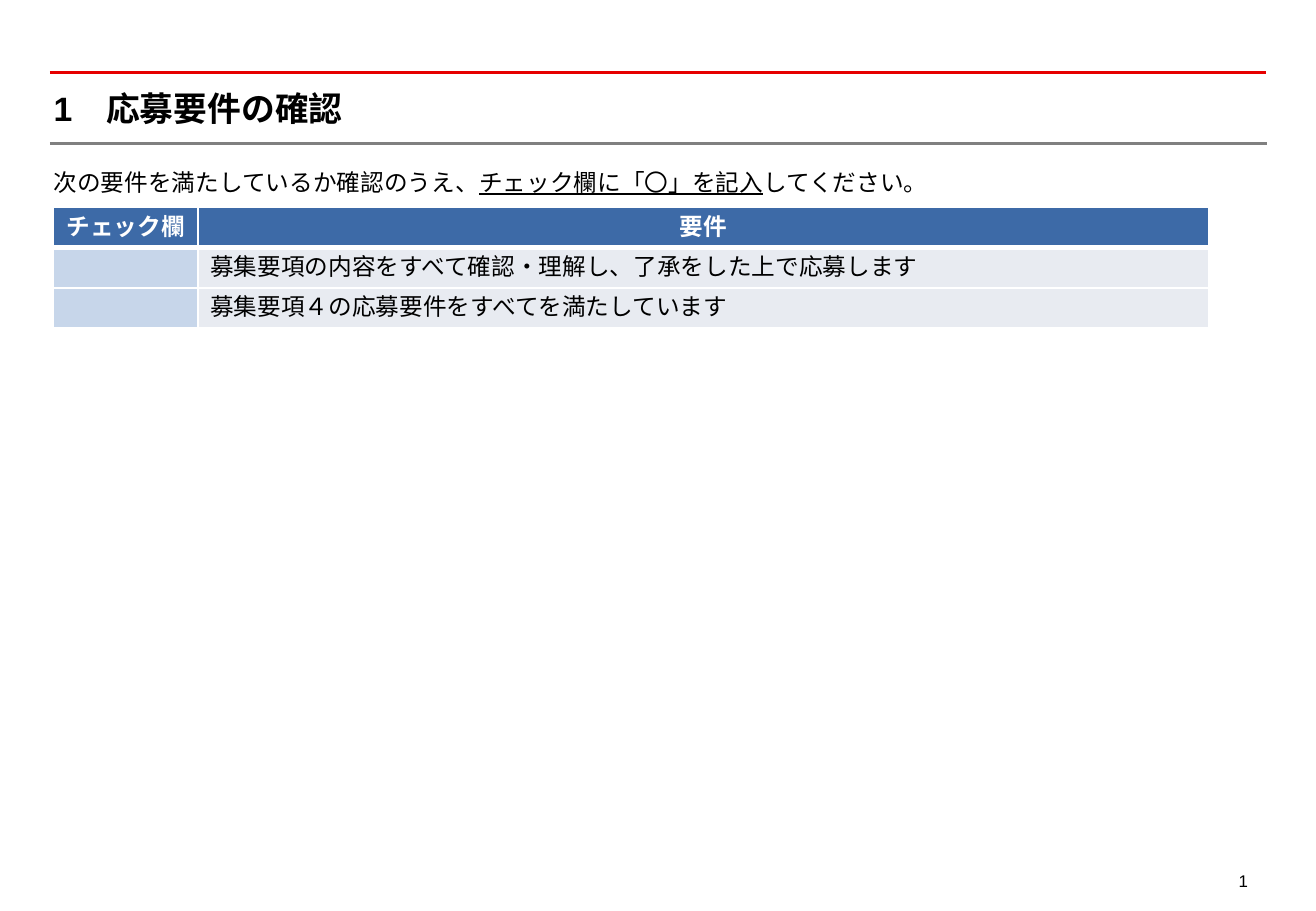
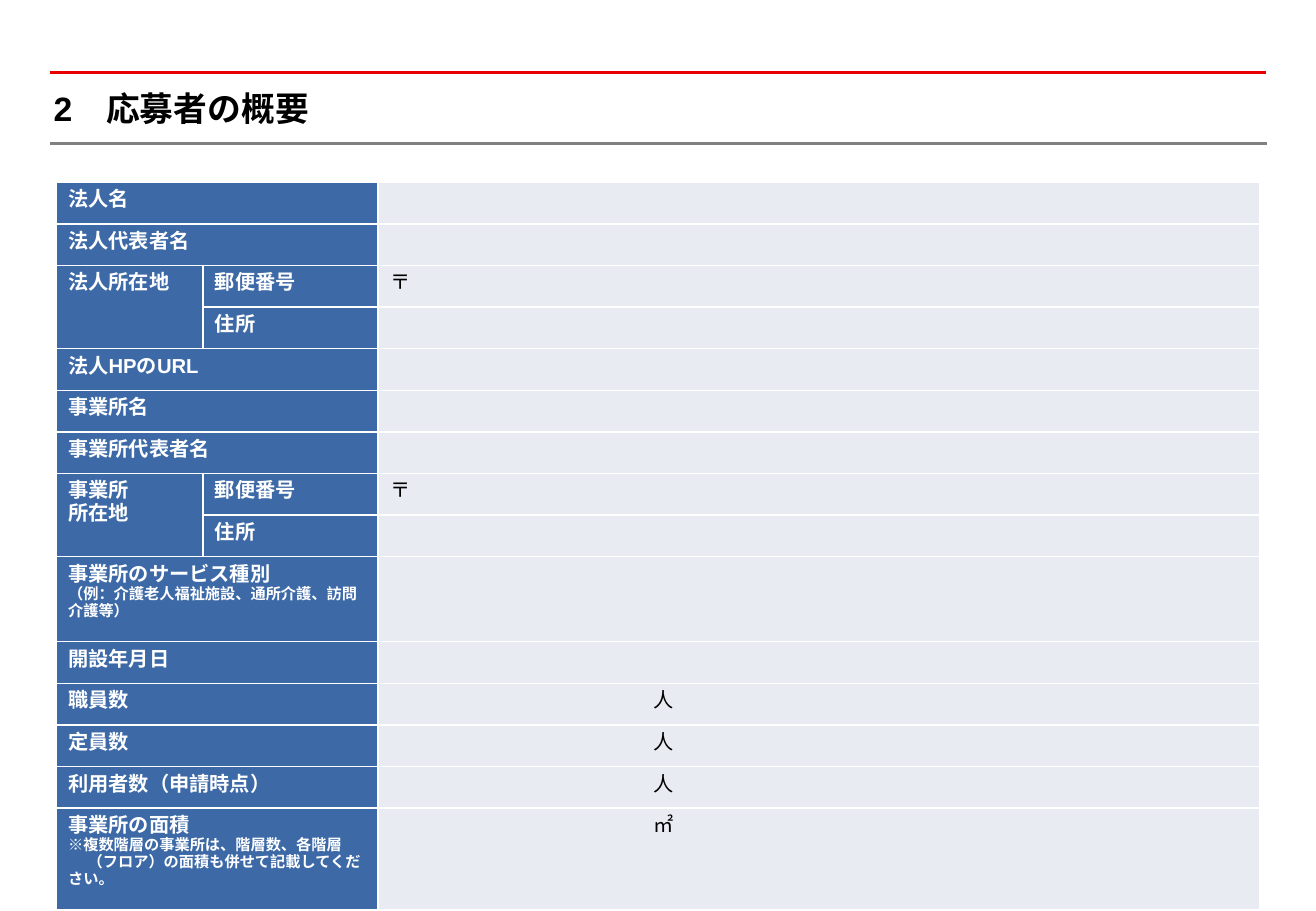
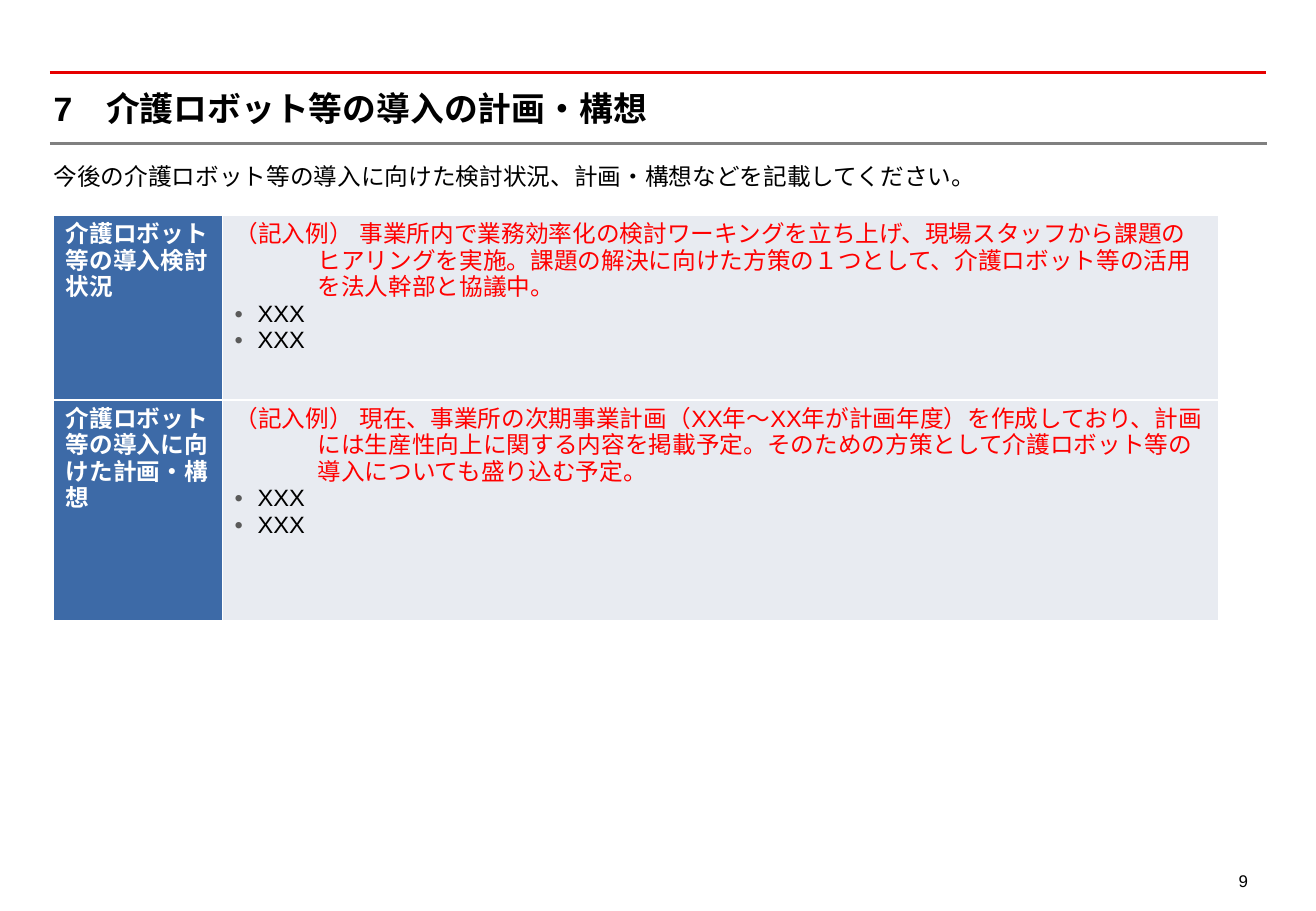
"""Build three pages of an application form for care robot support."""
from lxml.etree import SubElement
from pptx import Presentation
from pptx.enum.shapes import MSO_CONNECTOR
from pptx.enum.text import MSO_ANCHOR, PP_ALIGN
from pptx.dml.color import RGBColor
from pptx.oxml.ns import qn
from pptx.util import Cm, Pt

FONT = "Arial"
BLACK, WHITE, RED = "000000", "FFFFFF", "FF0000"
BLUE, SKY, PALE = "3D6AA7", "C7D6EA", "E8EBF1"
LEFT, MID, RIGHT = PP_ALIGN.LEFT, PP_ALIGN.CENTER, PP_ALIGN.RIGHT

STYLES = {
    "title": (20, BLACK, True, LEFT, 0, 0),
    "page": (10, BLACK, False, RIGHT, 0, 0),
    "note": (14, BLACK, False, LEFT, 0, 0),
    "top": (14, WHITE, True, MID, 0, 0),
    "side": (14, WHITE, True, LEFT, 0, 0),
    "tip": (14, RED, False, LEFT, 1.73, -1.73),
    "bullet": (14, BLACK, False, LEFT, 0.48, -0.48),
    "label": (12, WHITE, True, LEFT, 0, 0),
    "small": (9, WHITE, True, LEFT, 0, 0),
    "inset": (9, WHITE, True, LEFT, 0, 0.41),
    "value": (12, BLACK, False, LEFT, 0, 0),
    "unit": (12, BLACK, False, LEFT, 5.5, 0),
}


def paint(fill, code):
    fill.solid()
    fill.fore_color.rgb = RGBColor.from_string(code)


def write(frame, lines):
    """Write lines of (style, run, run, ...), where every second run is underlined."""
    frame.word_wrap = True
    for i, (style, *runs) in enumerate(lines):
        size, code, bold, align, left, first = STYLES[style]
        para = frame.add_paragraph() if i else frame.paragraphs[0]
        para.alignment = align
        props = para._p.get_or_add_pPr()
        props.set("marL", str(Cm(left)))
        props.set("indent", str(Cm(first)))
        if style == "bullet":
            color = SubElement(props, qn("a:buClr"))
            SubElement(color, qn("a:srgbClr"), val="5A5A5A")
            SubElement(props, qn("a:buFont"), typeface=FONT)
            SubElement(props, qn("a:buChar"), char="•")
        for j, text in enumerate(runs):
            run = para.add_run()
            run.text = text
            run.font.size = Pt(size)
            run.font.bold = bold
            run.font.underline = j % 2 == 1
            run.font.name = FONT
            paint(run.font.fill, code)
            SubElement(run.font._element, qn("a:ea"), typeface=FONT)


form = [
    (["法人名"], "", ""),
    (["法人代表者名"], "", ""),
    (["法人所在地"], "郵便番号", "〒"),
    ([], "住所", ""),
    (["法人HPのURL"], "", ""),
    (["事業所名"], "", ""),
    (["事業所代表者名"], "", ""),
    (["事業所", "所在地"], "郵便番号", "〒"),
    ([], "住所", ""),
    (["事業所のサービス種別"], "", ""),
    (["開設年月日"], "", ""),
    (["職員数"], "", "人"),
    (["定員数"], "", "人"),
    (["利用者数（申請時点）"], "", "人"),
    (["事業所の面積"], "", "㎡"),
]
cells = []
for names, part, value in form:
    kind = "value" if value == "〒" else "unit"
    cells.append([
        [("label", name) for name in names],
        [("label", part)] if part else [],
        [(kind, value)] if value else [],
    ])
cells[9][0].append(("small", "（例：介護老人福祉施設、通所介護、訪問介護等）"))
cells[14][0] += [
    ("small", "※複数階層の事業所は、階層数、各階層"),
    ("inset", "（フロア）の面積も併せて記載してください。"),
]
spans = [(r, 0, r, 1) for r, row in enumerate(form) if not row[1]]
spans += [(2, 0, 3, 0), (7, 0, 8, 0)]
dots = [("bullet", "XXX")] * 2

pages = [
    {
        "title": "1　応募要件の確認", "page": "1", "top": 3.51,
        "note": ("次の要件を満たしているか確認のうえ、", "チェック欄に「〇」を記入", "してください。"),
        "at": (1.12, 4.34), "cols": (3.02, 21.13), "rows": [0.84] * 3,
        "tints": (SKY, PALE), "head": True, "size": 14, "foot": 0, "spans": [],
        "cells": [
            [[("top", "チェック欄")], [("top", "要件")]],
            [[], [("note", "募集要項の内容をすべて確認・理解し、了承をした上で応募します")]],
            [[], [("note", "募集要項４の応募要件をすべてを満たしています")]],
        ],
    },
    {
        "title": "2　応募者の概要", "page": "", "top": 0, "note": (),
        "at": (1.17, 3.81), "cols": (3.07, 3.66, 18.44),
        "rows": [0.87] * 9 + [1.78] + [0.87] * 4 + [2.13],
        "tints": (BLUE, BLUE, PALE), "head": False, "size": 12, "foot": 0.13,
        "spans": spans, "cells": cells,
    },
    {
        "title": "7　介護ロボット等の導入の計画・構想", "page": "9", "top": 3.38,
        "note": ("今後の介護ロボット等の導入に向けた検討状況、計画・構想などを記載してください。",),
        "at": (1.12, 4.5), "cols": (3.53, 20.83), "rows": [3.86, 4.62],
        "tints": (BLUE, PALE), "head": False, "size": 14, "foot": 0.13, "spans": [],
        "cells": [
            [[("side", "介護ロボット等の導入検討状況")],
             [("tip", "（記入例） 事業所内で業務効率化の検討ワーキングを立ち上げ、現場スタッフから課題の"
               "ヒアリングを実施。課題の解決に向けた方策の１つとして、介護ロボット等の活用を法人幹部と協議中。")] + dots],
            [[("side", "介護ロボット等の導入に向けた計画・構想")],
             [("tip", "（記入例） 現在、事業所の次期事業計画（XX年～XX年が計画年度）を作成しており、"
               "計画には生産性向上に関する内容を掲載予定。そのための方策として介護ロボット等の導入についても盛り込む予定。")] + dots],
        ],
    },
]

deck = Presentation()
deck.slide_width, deck.slide_height = Cm(27.51), Cm(19.05)

for page in pages:
    slide = deck.slides.add_slide(deck.slide_layouts[6])
    shapes = slide.shapes

    for y, end, code, width in ((1.52, 26.47, "E60000", 2), (3, 26.49, "808080", 1.25)):
        rule = shapes.add_connector(MSO_CONNECTOR.STRAIGHT, Cm(1.04), Cm(y), Cm(end), Cm(y))
        paint(rule.line.fill, code)
        rule.line.width = Pt(width)
        SubElement(rule._element.spPr, qn("a:effectLst"))

    texts = [("title", (page["title"],), 1.12, 1.83, 25.17, 0.86)]
    if page["note"]:
        texts.append(("note", page["note"], 1.12, page["top"], 25.17, 0.64))
    if page["page"]:
        texts.append(("page", (page["page"],), 25.22, 18.08, 1.12, 0.71))
    for style, runs, *place in texts:
        frame = shapes.add_textbox(*map(Cm, place)).text_frame
        if style != "page":
            frame.margin_left = frame.margin_right = 0
            frame.margin_top = frame.margin_bottom = 0
        if style == "title":
            frame.vertical_anchor = MSO_ANCHOR.MIDDLE
        write(frame, [(style, *runs)])

    cols, rows = page["cols"], page["rows"]
    x, y = page["at"]
    table = shapes.add_table(len(rows), len(cols), Cm(x), Cm(y), Cm(sum(cols)), Cm(sum(rows))).table
    table.first_row = table.horz_banding = False
    for c, width in enumerate(cols):
        table.columns[c].width = Cm(width)
    for r, height in enumerate(rows):
        table.rows[r].height = Cm(height)
        for c, lines in enumerate(page["cells"][r]):
            cell = table.cell(r, c)
            cell.margin_bottom = Cm(page["foot"])
            props = cell._tc.get_or_add_tcPr()
            for side in "LRTB":
                thick = page["head"] and (r, side) in ((0, "B"), (1, "T"))
                edge = SubElement(props, qn("a:ln" + side), w=str(Pt(3 if thick else 1)))
                paper = SubElement(edge, qn("a:solidFill"))
                SubElement(paper, qn("a:srgbClr"), val=WHITE)
            paint(cell.fill, BLUE if page["head"] and r == 0 else page["tints"][c])
            write(cell.text_frame, lines)
            if not lines:
                para = cell.text_frame.paragraphs[0]
                SubElement(para._p, qn("a:endParaRPr"), sz=str(page["size"] * 100))
    for r, c, low, far in page["spans"]:
        table.cell(r, c).merge(table.cell(low, far))

deck.save("out.pptx")
